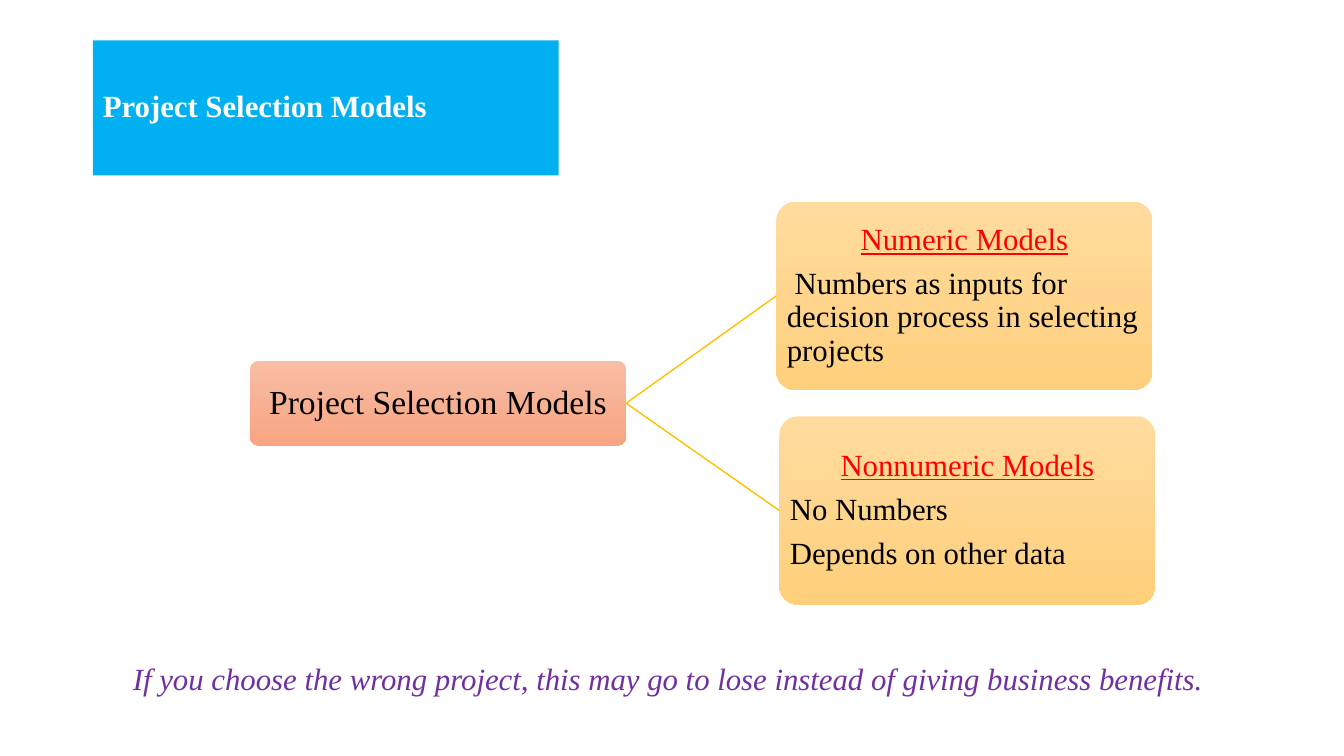
from pptx import Presentation
from pptx.dml.color import RGBColor
from pptx.enum.shapes import MSO_CONNECTOR, MSO_SHAPE
from pptx.enum.text import MSO_ANCHOR, MSO_AUTO_SIZE, PP_ALIGN
from pptx.oxml.ns import qn
from pptx.util import Inches, Pt
from lxml import etree

LEFT, CENTER = PP_ALIGN.LEFT, PP_ALIGN.CENTER
MIDDLE = MSO_ANCHOR.MIDDLE
FIT_NONE = MSO_AUTO_SIZE.NONE
ROUNDED = MSO_SHAPE.ROUNDED_RECTANGLE
STRAIGHT = MSO_CONNECTOR.STRAIGHT
LEFT_SIDE, RIGHT_SIDE = 1, 3

FONT = "Times New Roman"
TITLE_ONLY = 5
WHITE = RGBColor(0xFF, 0xFF, 0xFF)
BLACK = RGBColor(0x00, 0x00, 0x00)
BLUE = RGBColor(0x00, 0xB0, 0xF0)
RED = RGBColor(0xFF, 0x00, 0x00)
PURPLE = RGBColor(0x70, 0x30, 0xA0)
GOLD = RGBColor(0xFF, 0xC0, 0x00)
CORAL = (RGBColor(0xF7, 0xBD, 0xA5), RGBColor(0xF8, 0xA5, 0x82))
AMBER = (RGBColor(0xFF, 0xDB, 0x9E), RGBColor(0xFF, 0xD0, 0x7C))

NODE_WIDTH = 3.73
MODELS = [
    (7.7, 2.0, "Numeric Models",
     [" Numbers as inputs for decision process in selecting projects"]),
    (7.73, 4.13, "Nonnumeric Models",
     ["No Numbers", "Depends on other data"]),
]


def format_paragraph(p, size, color, align=LEFT, **styles):
    """Format a paragraph and its runs; styles are font attributes."""
    p.alignment = align
    for r in p.runs:
        r.font.name = FONT
        r.font.size = Pt(size)
        r.font.color.rgb = color
        for name, value in styles.items():
            setattr(r.font, name, value)


def set_title(slide, text):
    sp = slide.shapes.title
    sp.left, sp.top = Inches(0.92), Inches(0.4)
    sp.width, sp.height = Inches(4.62), Inches(1.34)
    sp.fill.solid()
    sp.fill.fore_color.rgb = BLUE
    tf = sp.text_frame
    tf.text = text
    tf.auto_size = FIT_NONE
    tf.vertical_anchor = MIDDLE
    tf.paragraphs[0].line_spacing = 0.9
    format_paragraph(tf.paragraphs[0], 22, WHITE, bold=True)


def add_node(slide, left, top, height, colors, lines):
    """Add a rounded box with a top-to-bottom gradient."""
    sp = slide.shapes.add_shape(ROUNDED, Inches(left), Inches(top),
                                Inches(NODE_WIDTH), Inches(height))
    sp.adjustments[0] = 0.1
    sp.shadow.inherit = False
    sp.line.fill.background()
    sp.fill.gradient()
    sp.fill.gradient_angle = 270
    for stop, color in zip(sp.fill.gradient_stops, colors):
        stop.color.rgb = color
    tf = sp.text_frame
    tf.text = "\n".join(lines)
    tf.word_wrap = True
    tf.vertical_anchor = MIDDLE
    tf.margin_left = tf.margin_right = Inches(0.05)
    tf.margin_top = tf.margin_bottom = Inches(0.05)
    for p in tf.paragraphs:
        p.line_spacing = 0.9
        p.space_after = Pt(8)
    return sp


def add_root(slide, text):
    sp = add_node(slide, 2.48, 3.58, 0.84, CORAL, [text])
    format_paragraph(sp.text_frame.paragraphs[0], 24, BLACK, CENTER)
    return sp


def add_model(slide, left, top, heading, details):
    sp = add_node(slide, left, top, 1.87, AMBER, [heading, *details])
    first, *rest = sp.text_frame.paragraphs
    format_paragraph(first, 22, RED, CENTER, underline=True)
    for p in rest:
        format_paragraph(p, 22, BLACK)
    return sp


def add_branch(slide, parent, child):
    line = slide.shapes.add_connector(STRAIGHT, 0, 0, 0, 0)
    line.begin_connect(parent, RIGHT_SIDE)
    line.end_connect(child, LEFT_SIDE)
    line.line.color.rgb = GOLD
    line.line.width = Pt(1)
    etree.SubElement(line._element.spPr, qn("a:effectLst"))


def add_closing_remark(slide, text):
    sp = slide.shapes.add_textbox(Inches(1.22), Inches(6.5),
                                  Inches(11.08), Inches(0.47))
    tf = sp.text_frame
    tf.text = text
    tf.word_wrap = True
    format_paragraph(tf.paragraphs[0], 22, PURPLE, italic=True)


def main():
    prs = Presentation()
    prs.slide_width, prs.slide_height = Inches(13.33), Inches(7.5)
    slide = prs.slides.add_slide(prs.slide_layouts[TITLE_ONLY])
    set_title(slide, "Project Selection Models")
    root = add_root(slide, "Project Selection Models")
    for model in MODELS:
        add_branch(slide, root, add_model(slide, *model))
    add_closing_remark(slide, "If you choose the wrong project, this may go to "
                              "lose instead of giving business benefits.")
    prs.save("out.pptx")


if __name__ == "__main__":
    main()
